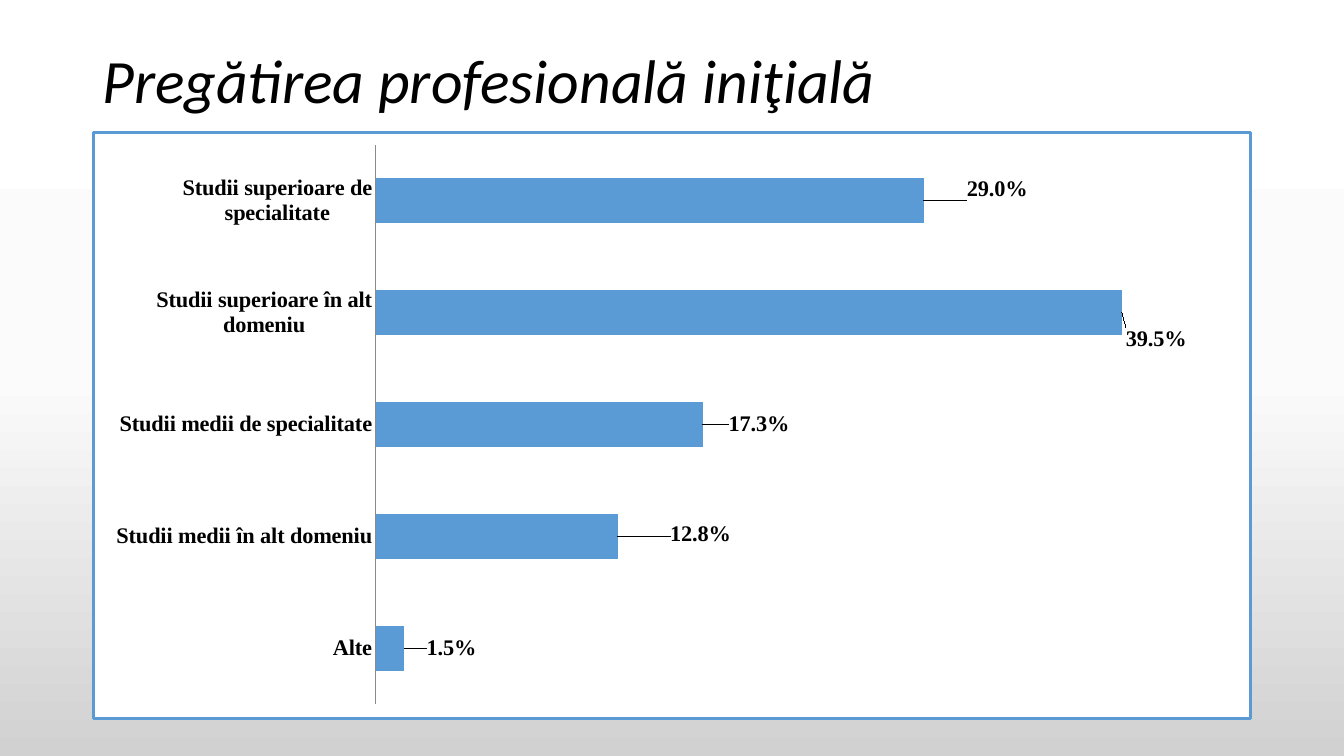
from copy import deepcopy
from dataclasses import dataclass

from lxml import etree
from pptx import Presentation
from pptx.chart.data import CategoryChartData
from pptx.dml.color import RGBColor
from pptx.enum.chart import XL_CHART_TYPE, XL_LABEL_POSITION, XL_TICK_MARK
from pptx.enum.text import MSO_ANCHOR
from pptx.oxml import parse_xml
from pptx.oxml.ns import nsdecls, qn
from pptx.util import Inches, Pt

BAR_CLUSTERED = XL_CHART_TYPE.BAR_CLUSTERED
OUTSIDE_END = XL_LABEL_POSITION.OUTSIDE_END
NO_TICK = XL_TICK_MARK.NONE
MIDDLE = MSO_ANCHOR.MIDDLE

SLIDE_WIDTH, SLIDE_HEIGHT = Inches(13.33), Inches(7.5)
COLUMNS, ROWS = 160, 90
PERCENT = "0.0%"


@dataclass(frozen=True)
class Theme:
    title_font: str = "Calibri"
    chart_font: str = "Times New Roman"
    title_size: int = 44
    chart_size: int = 14
    label_size: int = 16
    text: str = "000000"
    accent: str = "5B9BD5"
    panel: str = "FFFFFF"
    axis: str = "8B8B8B"
    background: tuple = ((0, "FFFFFF"), (0.5, "FBFBFB"), (1, "D1D1D1"))


THEME = Theme()

STUDIES = [
    ("Alte", 0.015, (0.016, 0)),
    ("Studii medii în alt domeniu", 0.128, (0.042, -0.004)),
    ("Studii medii de specialitate", 0.173, (0.019, 0)),
    ("Studii superioare în alt domeniu", 0.395, (0, 0.046)),
    ("Studii superioare de specialitate", 0.29, (0.034, -0.02)),
]


def grid_box(column, row, columns, rows):
    cell_width, cell_height = SLIDE_WIDTH / COLUMNS, SLIDE_HEIGHT / ROWS
    return (int(column * cell_width), int(row * cell_height),
            int(columns * cell_width), int(rows * cell_height))


def style_font(font, name, size, bold=False, italic=False):
    font.name = name
    font.size = Pt(size)
    font.bold = bold
    font.italic = italic
    font.color.rgb = RGBColor.from_string(THEME.text)


def manual_layout(**values):
    layout = etree.Element(qn("c:layout"))
    manual = etree.SubElement(layout, qn("c:manualLayout"))
    for tag, value in values.items():
        etree.SubElement(manual, qn(f"c:{tag}"), val=str(value))
    return layout


def paint_background(slide):
    fill = slide.background.fill
    fill.gradient()
    fill.gradient_angle = 270
    first_stop = slide.element.find(".//" + qn("a:gs"))
    first_stop.addnext(deepcopy(first_stop))
    for stop, (position, color) in zip(fill.gradient_stops, THEME.background):
        stop.position = position
        stop.color.rgb = RGBColor.from_string(color)


def add_title(slide, text, box):
    text_frame = slide.shapes.add_textbox(*box).text_frame
    text_frame.word_wrap = True
    text_frame.vertical_anchor = MIDDLE
    text_frame.text = text
    paragraph = text_frame.paragraphs[0]
    paragraph.line_spacing = 0.9
    style_font(paragraph.runs[0].font, THEME.title_font, THEME.title_size, italic=True)


def frame_chart(chart):
    chart_space = chart.element
    frame = parse_xml(
        f'<c:spPr {nsdecls("c", "a")}>'
        f'<a:solidFill><a:srgbClr val="{THEME.panel}"/></a:solidFill>'
        f'<a:ln w="{Pt(2)}"><a:solidFill><a:srgbClr val="{THEME.accent}"/></a:solidFill></a:ln>'
        '</c:spPr>')
    chart_space.find(qn("c:chart")).addnext(frame)


def place_plot(chart, left, top, width, height):
    plot_area = chart.element.find(".//" + qn("c:plotArea"))
    for layout in plot_area.findall(qn("c:layout")):
        plot_area.remove(layout)
    plot_area.insert(0, manual_layout(
        layoutTarget="inner", xMode="edge", yMode="edge", x=left, y=top, w=width, h=height))


def style_axes(chart):
    category_axis = chart.category_axis
    category_axis.major_tick_mark = NO_TICK
    category_axis.has_major_gridlines = False
    category_axis.format.line.color.rgb = RGBColor.from_string(THEME.axis)
    category_axis.format.line.width = Pt(0.75)
    style_font(category_axis.tick_labels.font, THEME.chart_font, THEME.label_size, bold=True)
    value_axis = chart.value_axis
    value_axis.minimum_scale = 0
    value_axis.maximum_scale = 0.45
    value_axis.has_major_gridlines = False
    value_axis.tick_labels.number_format = PERCENT
    value_axis.tick_labels.number_format_is_linked = False
    value_axis.visible = False


def label_bars(series):
    labels = series.data_labels
    labels.show_value = True
    labels.number_format = PERCENT
    labels.number_format_is_linked = False
    labels.position = OUTSIDE_END
    style_font(labels.font, THEME.chart_font, THEME.label_size, bold=True)
    for index, (_, _, (shift_x, shift_y)) in enumerate(STUDIES):
        label = series.points[index].data_label
        label.position = OUTSIDE_END
        style_font(label.font, THEME.chart_font, THEME.label_size, bold=True)
    for element, (_, _, (shift_x, shift_y)) in zip(
            series.data_labels._element.findall(qn("c:dLbl")), STUDIES):
        element.insert(1, manual_layout(x=shift_x, y=shift_y))
        number_format = etree.Element(qn("c:numFmt"), formatCode=PERCENT, sourceLinked="0")
        element.insert(2, number_format)


def add_studies_chart(slide, box):
    data = CategoryChartData(number_format=PERCENT)
    data.categories = [name for name, _, _ in STUDIES]
    data.add_series("Series 1", [share for _, share, _ in STUDIES])
    chart = slide.shapes.add_chart(BAR_CLUSTERED, *box, data).chart
    chart.has_legend = False
    chart.has_title = False
    style_font(chart.font, THEME.chart_font, THEME.chart_size, bold=True)
    frame_chart(chart)
    place_plot(chart, 0.244, 0.021, 0.735, 0.955)
    style_axes(chart)
    plot = chart.plots[0]
    plot.gap_width = 150
    plot.vary_by_categories = False
    series = plot.series[0]
    series.format.fill.solid()
    series.format.fill.fore_color.rgb = RGBColor.from_string(THEME.accent)
    label_bars(series)


def main():
    presentation = Presentation()
    presentation.slide_width = SLIDE_WIDTH
    presentation.slide_height = SLIDE_HEIGHT
    slide = presentation.slides.add_slide(presentation.slide_layouts[6])
    paint_background(slide)
    add_title(slide, "Pregătirea profesională iniţială", grid_box(11, 4.8, 138, 10.2))
    add_studies_chart(slide, grid_box(11, 15.6, 138, 70.1))
    presentation.save("out.pptx")


if __name__ == "__main__":
    main()
